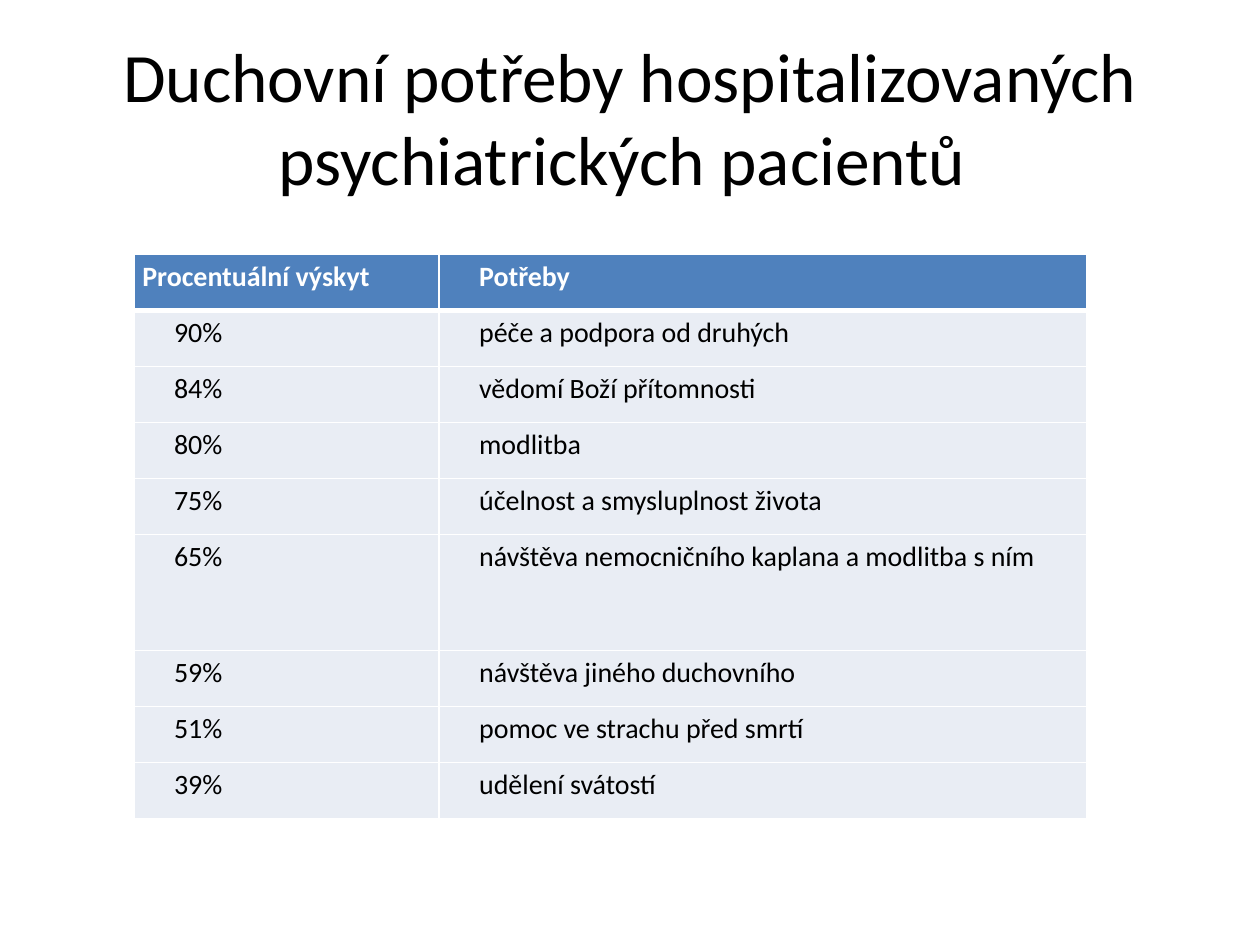
import pptx
import pptx.util
import pptx.dml.color
import pptx.enum.text
import pptx.oxml
import pptx.oxml.ns
from pptx.util import Cm

TITLE = "Duchovní potřeby hospitalizovaných psychiatrických pacientů "
HEADER = ("Procentuální výskyt", "Potřeby")
NEEDS = [
    ("90%", "péče a podpora od druhých"),
    ("84%", "vědomí Boží přítomnosti"),
    ("80%", "modlitba"),
    ("75%", "účelnost a smysluplnost života"),
    ("65%", "návštěva nemocničního kaplana a modlitba s ním"),
    ("59%", "návštěva jiného duchovního"),
    ("51%", "pomoc ve strachu před smrtí"),
    ("39%", "udělení svátostí"),
]
TALL_ROW = 5

THEME = {
    "font": "Calibri",
    "title_size": 39.6,
    "table_size": 16,
    "ink": "000000",
    "paper": "FFFFFF",
    "header_fill": "4F81BD",
    "body_fill": "E9EDF4",
}

COLUMN_WIDTHS = (Cm(6.15), Cm(13.05))
ROW_HEIGHT, TALL_HEIGHT = Cm(1.13), Cm(2.34)
TEXT_INDENT = Cm(0.64)
CELL_FORMAT = {
    "margin_left": Cm(0.17),
    "margin_right": Cm(0.17),
    "margin_top": 0,
    "margin_bottom": 0,
}


def apply_format(target, values):
    for name, value in values.items():
        setattr(target, name, value)


def add_span(para, text, size, color, bold=False):
    span = para.add_run()
    span.text = text
    apply_format(span.font, {
        "name": THEME["font"],
        "size": pptx.util.Pt(size),
        "bold": bold,
    })
    span.font.color.rgb = pptx.dml.color.RGBColor.from_string(color)


def add_borders(cell, bottom_width, top_width):
    widths = {"lnL": 1, "lnR": 1, "lnT": top_width, "lnB": bottom_width}
    properties = cell._tc.get_or_add_tcPr()
    for side, width in widths.items():
        properties.append(pptx.oxml.parse_xml(
            f'<a:{side} {pptx.oxml.ns.nsdecls("a")} w="{pptx.util.Pt(width)}">'
            f'<a:solidFill><a:srgbClr val="{THEME["paper"]}"/></a:solidFill></a:{side}>'
        ))


def add_title(page):
    box = page.shapes.add_textbox(Cm(1.27), Cm(0.76), Cm(22.86), Cm(3.18))
    apply_format(box.text_frame, {
        "word_wrap": True,
        "vertical_anchor": pptx.enum.text.MSO_ANCHOR.MIDDLE,
    })
    para = box.text_frame.paragraphs[0]
    para.alignment = pptx.enum.text.PP_ALIGN.CENTER
    add_span(para, TITLE, THEME["title_size"], THEME["ink"])


def fill_cell(cell, text, row, column):
    is_header = row == 0
    apply_format(cell, CELL_FORMAT)
    add_borders(cell, 3 if is_header else 1, 3 if row == 1 else 1)
    cell.fill.solid()
    cell.fill.fore_color.rgb = pptx.dml.color.RGBColor.from_string(
        THEME["header_fill" if is_header else "body_fill"])
    para = cell.text_frame.paragraphs[0]
    para.line_spacing = 1.15
    if not is_header or column > 0:
        para._p.get_or_add_pPr().set("marL", str(TEXT_INDENT))
    color = THEME["paper" if is_header else "ink"]
    add_span(para, text, THEME["table_size"], color, is_header)


def add_needs_table(page):
    rows = [HEADER, *NEEDS]
    heights = [TALL_HEIGHT if index == TALL_ROW else ROW_HEIGHT
               for index in range(len(rows))]
    table = page.shapes.add_table(
        len(rows), len(HEADER), Cm(2.7), Cm(5.13),
        sum(COLUMN_WIDTHS), sum(heights)).table
    apply_format(table, {"first_row": False, "horz_banding": False})
    for column, width in zip(table.columns, COLUMN_WIDTHS):
        column.width = width
    for row, (texts, height) in enumerate(zip(rows, heights)):
        table.rows[row].height = height
        for column, text in enumerate(texts):
            fill_cell(table.cell(row, column), text, row, column)


def main():
    deck = pptx.Presentation()
    apply_format(deck, {"slide_width": Cm(25.4), "slide_height": Cm(19.05)})
    page = deck.slides.add_slide(deck.slide_layouts[6])
    add_title(page)
    add_needs_table(page)
    deck.save("out.pptx")


if __name__ == "__main__":
    main()
